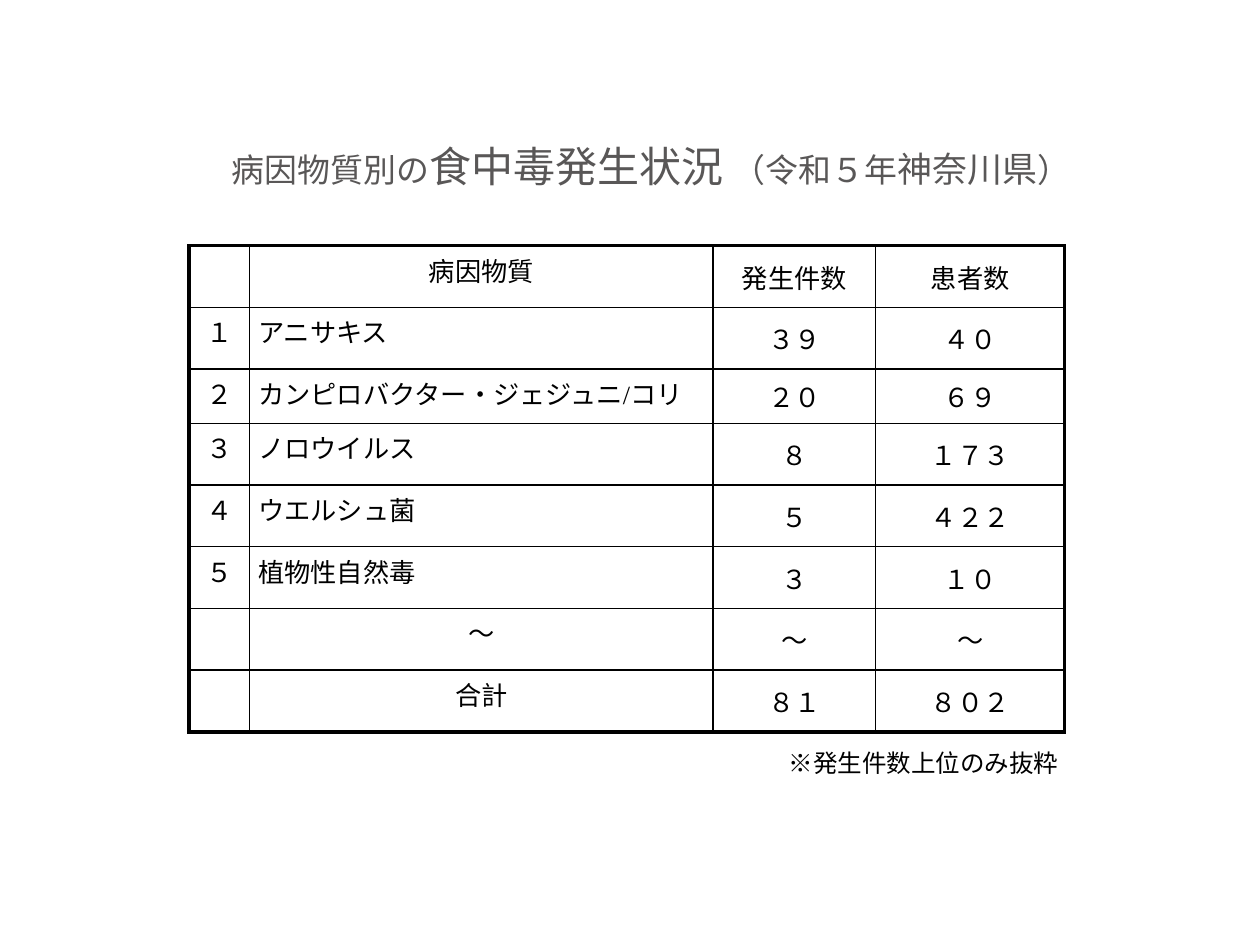
from pptx import Presentation
from pptx.dml.color import RGBColor
from pptx.enum.text import MSO_ANCHOR, PP_ALIGN
from pptx.oxml import parse_xml
from pptx.oxml.ns import nsdecls
from pptx.util import Pt

PX = 9144  # 100 px to the inch
LEFT, CENTER = PP_ALIGN.LEFT, PP_ALIGN.CENTER
TOP, MIDDLE = MSO_ANCHOR.TOP, MSO_ANCHOR.MIDDLE
COLORS = {"title": "595757", "text": "000000", "border": "000000"}
JP_FONT = "Noto Sans CJK JP"


def add_run(p, text, size, font, color):
    r = p.add_run()
    r.text = text
    for key, value in {"name": font, "size": Pt(size)}.items():
        setattr(r.font, key, value)
    r.font.color.rgb = RGBColor.from_string(COLORS[color])
    r.font._element.append(parse_xml(f'<a:ea {nsdecls("a")} typeface="{JP_FONT}"/>'))


def add_text(x, y, w, h, anchor):
    tf = s.shapes.add_textbox(x * PX, y * PX, w * PX, h * PX).text_frame
    tf.word_wrap = True
    tf.vertical_anchor = anchor
    return tf.paragraphs[0]


prs = Presentation()
prs.slide_width, prs.slide_height = 1000 * PX, 750 * PX
s = prs.slides.add_slide(prs.slide_layouts[6])

# Table of causes, cases and patients
rows = [
    ("", "病因物質", "発生件数", "患者数"),
    ("１", "アニサキス", "３９", "４０"),
    ("２", "カンピロバクター・ジェジュニ/コリ", "２０", "６９"),
    ("３", "ノロウイルス", "８", "１７３"),
    ("４", "ウエルシュ菌", "５", "４２２"),
    ("５", "植物性自然毒", "３", "１０"),
    ("", "～", "～", "～"),
    ("", "合計", "８１", "８０２"),
]
col_widths = [48, 368, 129, 150]
row_heights = [49, 49, 43, 49, 49, 49, 49, 49]
last_row, last_col = len(rows) - 1, len(col_widths) - 1
table = s.shapes.add_table(len(rows), len(col_widths), 150 * PX, 195 * PX,
                           sum(col_widths) * PX, sum(row_heights) * PX).table
table.first_row = table.horz_banding = False
for column, width in zip(table.columns, col_widths):
    column.width = width * PX
for row, height in zip(table.rows, row_heights):
    row.height = height * PX

cell_format = {"margin_left": 7 * PX, "margin_right": 7 * PX,
               "margin_top": 4 * PX, "margin_bottom": 4 * PX}
for i, row in enumerate(rows):
    for j, text in enumerate(row):
        cell = table.cell(i, j)
        cell.fill.background()
        for key, value in cell_format.items():
            setattr(cell, key, value)
        cell.vertical_anchor = MIDDLE if j >= 2 else TOP
        p = cell.text_frame.paragraphs[0]
        p.alignment = LEFT if j == 1 and 1 <= i <= 5 else CENTER
        if text:
            add_run(p, text, 15, "Times New Roman", "text")
        else:
            p.font.size = Pt(15)

        # Thick lines on the outer edge, thin ones inside
        outer = {"L": j == 0, "R": j == last_col, "T": i == 0, "B": i == last_row}
        tcPr = cell._tc.get_or_add_tcPr()
        for k, (side, thick) in enumerate(outer.items()):
            tcPr.insert(k, parse_xml(
                f'<a:ln{side} {nsdecls("a")} w="{Pt(2.25 if thick else 1)}"><a:solidFill>'
                f'<a:srgbClr val="{COLORS["border"]}"/></a:solidFill></a:ln{side}>'))

# Title
p = add_text(174, 91, 693, 86, MIDDLE)
p.line_spacing = 0.9
for text, size in [("病因物質別の", 18.8), ("食中毒発生状況 ", 24), ("（令和５年", 18.8),
                   ("神奈川県", 20), ("）", 18.8)]:
    add_run(p, text, size, JP_FONT, "title")

# Note below the table
p = add_text(616, 589, 239, 34, TOP)
add_run(p, "※発生件数上位のみ抜粋", 14, "Arial", "text")

prs.save("out.pptx")
